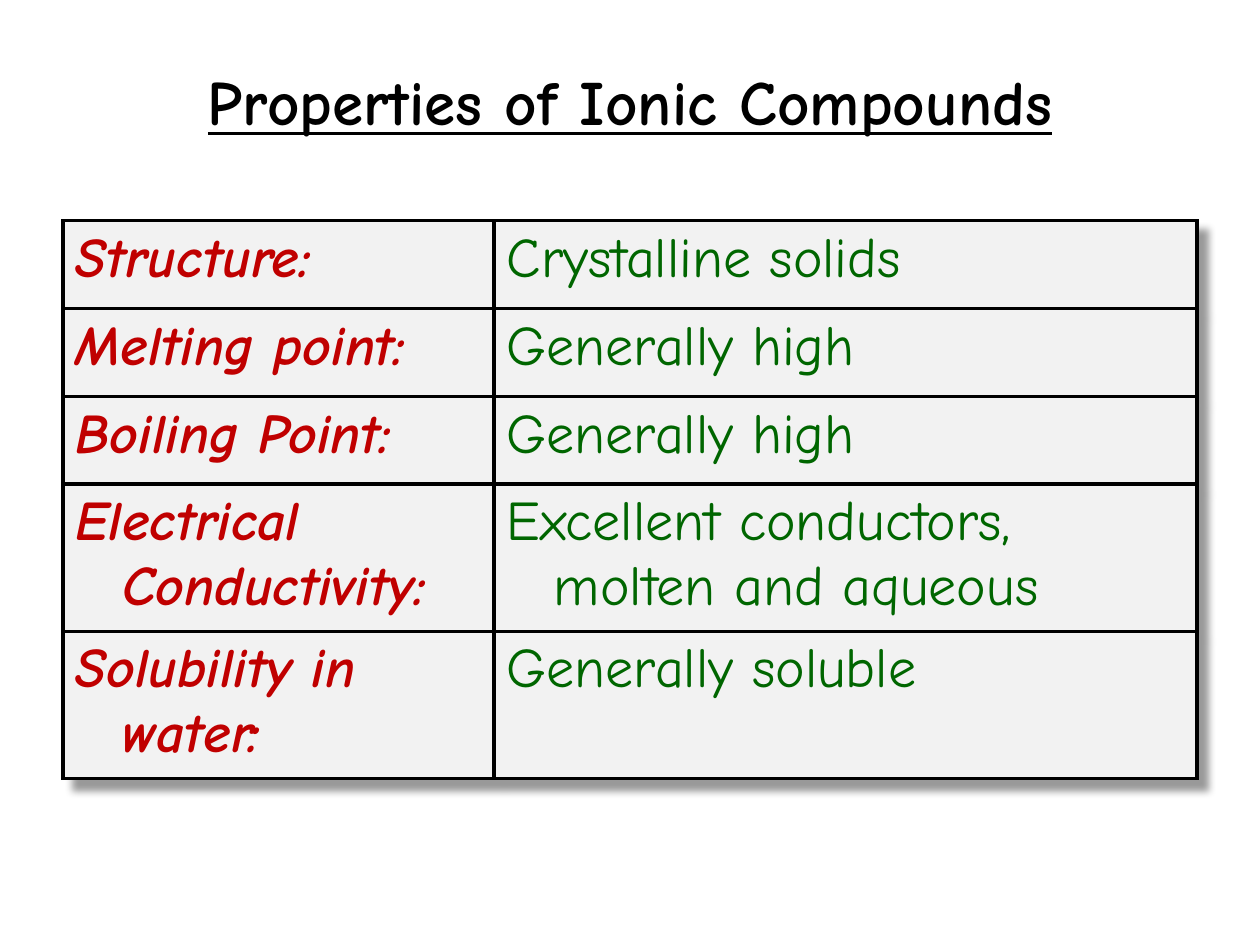
from lxml import etree
from pptx import Presentation
from pptx.dml.color import RGBColor
from pptx.enum.text import MSO_ANCHOR as Anchor, PP_ALIGN as Align
from pptx.oxml import parse_xml
from pptx.oxml.ns import nsdecls, qn
from pptx.util import Cm, Pt

BLACK = RGBColor(0x00, 0x00, 0x00)
RED = RGBColor(0xC0, 0x00, 0x00)
GREEN = RGBColor(0x00, 0x66, 0x00)
PALE_GREY = RGBColor(0xF2, 0xF2, 0xF2)

PROPERTIES = [
    ("Structure:", "Crystalline solids"),
    ("Melting point:", "Generally high"),
    ("Boiling Point:", "Generally high"),
    ("Electrical Conductivity:", "Excellent conductors, molten and aqueous"),
    ("Solubility in water:", "Generally soluble"),
]


class SlideBuilder:
    """Holds the style and the current slide."""

    font_name = "Comic Neue"
    title_size = Pt(36)
    cell_size = Pt(32)
    border_width = Pt(2.25)
    row_height = Cm(1.77)
    hanging_indent = Cm(0.95)

    def __init__(self, slide):
        self.slide = slide

    def add_run(self, paragraph, text, size, color, bold=False, italic=False, underline=False):
        run = paragraph.add_run()
        run.text = text
        font = run.font
        font.name, font.size, font.color.rgb = self.font_name, size, color
        font.bold, font.italic, font.underline = bold, italic, underline

    def add_title(self, text, left, top, width, height):
        shape = self.slide.shapes.add_textbox(left, top, width, height)
        frame = shape.text_frame
        frame.word_wrap = True
        frame.vertical_anchor = Anchor.MIDDLE
        paragraph = frame.paragraphs[0]
        paragraph.alignment = Align.CENTER
        self.add_run(paragraph, text, self.title_size, BLACK, bold=True, underline=True)

    def add_borders(self, cell):
        properties = cell._tc.get_or_add_tcPr()
        for position, side in enumerate(("lnL", "lnR", "lnT", "lnB")):
            border = parse_xml(
                f'<a:{side} {nsdecls("a")} w="{self.border_width}"><a:solidFill>'
                f'<a:srgbClr val="{BLACK}"/></a:solidFill></a:{side}>')
            properties.insert(position, border)

    def fill_cell(self, cell, text, color, emphasis):
        cell.fill.solid()
        cell.fill.fore_color.rgb = PALE_GREY
        self.add_borders(cell)
        paragraph = cell.text_frame.paragraphs[0]
        indents = paragraph._p.get_or_add_pPr()
        indents.set("marL", str(self.hanging_indent))
        indents.set("indent", str(-self.hanging_indent))
        self.add_run(paragraph, text, self.cell_size, color, bold=emphasis, italic=emphasis)

    def add_shadow(self, table):
        effects = etree.Element(qn("a:effectLst"))
        shadow = etree.SubElement(effects, qn("a:outerShdw"), blurRad=str(Cm(0.14)),
                                  dist=str(Cm(0.3)), dir="2700000", algn="tl")
        color = etree.SubElement(shadow, qn("a:srgbClr"), val=str(BLACK))
        etree.SubElement(color, qn("a:alpha"), val="40000")
        table._tbl.tblPr.insert(0, effects)

    def add_table(self, rows, left, top, column_widths):
        frame = self.slide.shapes.add_table(
            len(rows), len(column_widths), left, top,
            sum(column_widths), self.row_height * len(rows))
        table = frame.table
        table.first_row = table.horz_banding = False
        for column, width in zip(table.columns, column_widths):
            column.width = width
        for index, (label, value) in enumerate(rows):
            self.fill_cell(table.cell(index, 0), label, RED, emphasis=True)
            self.fill_cell(table.cell(index, 1), value, GREEN, emphasis=False)
        self.add_shadow(table)


def main():
    presentation = Presentation()
    presentation.slide_width, presentation.slide_height = Cm(25.4), Cm(19.05)
    slide = presentation.slides.add_slide(presentation.slide_layouts[6])
    builder = SlideBuilder(slide)

    # Heading
    builder.add_title("Properties of Ionic Compounds", Cm(1.9), Cm(0.43), Cm(21.6), Cm(3.18))

    # Table of properties
    builder.add_table(PROPERTIES, Cm(1.27), Cm(4.45), (Cm(8.69), Cm(14.17)))

    presentation.save("out.pptx")


if __name__ == "__main__":
    main()
